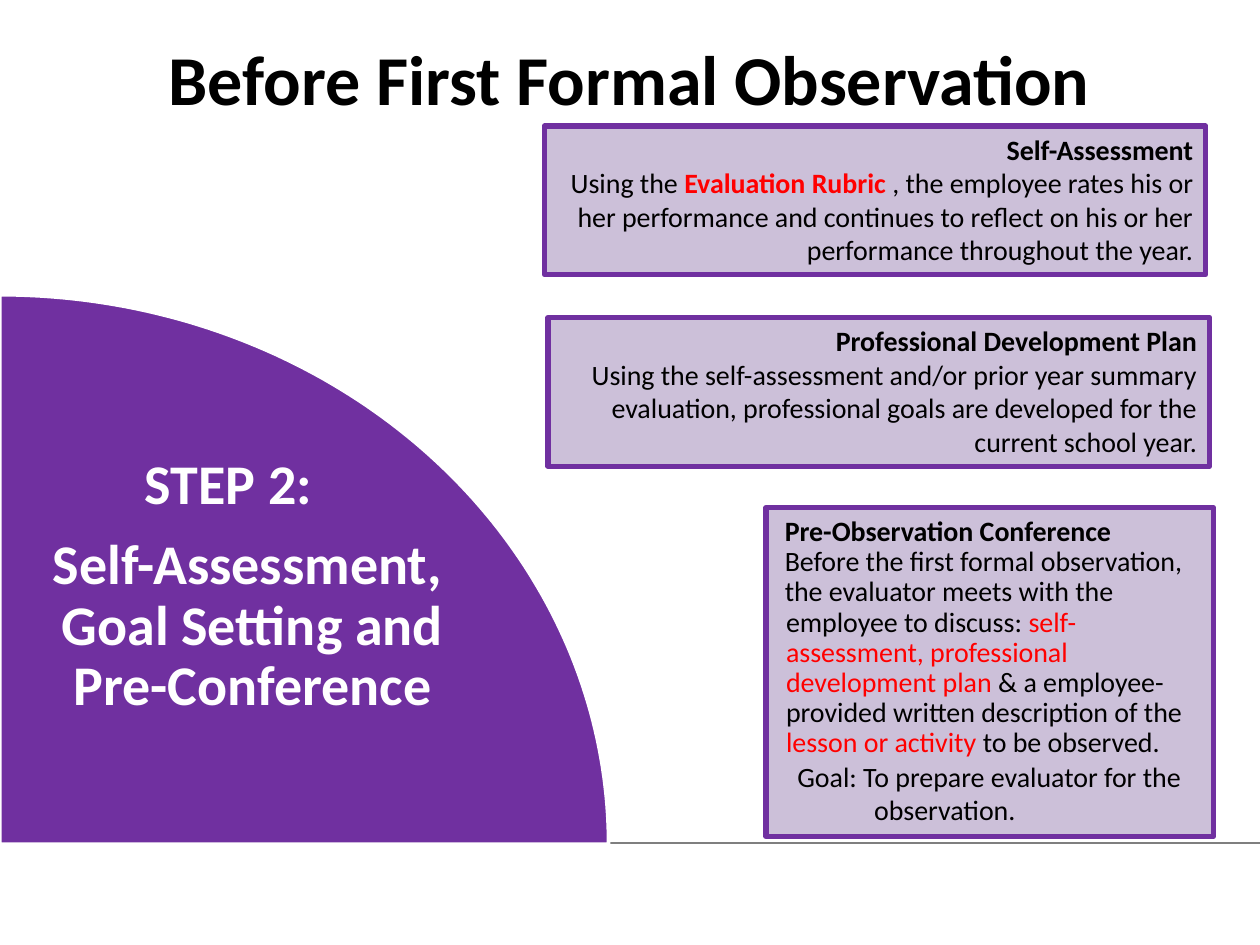
from math import cos, pi, sin

from lxml.etree import SubElement
from pptx import Presentation
from pptx.dml.color import RGBColor
from pptx.enum.shapes import MSO_CONNECTOR as Connector, MSO_SHAPE as Shape
from pptx.enum.text import MSO_ANCHOR as Anchor, PP_ALIGN as Align
from pptx.oxml.ns import qn
from pptx.util import Inches, Pt

BLACK, WHITE, RED = "000000", "FFFFFF", "FF0000"
PURPLE, LILAC, GRAY = "7030A0", "CCC0D9", "7F7F7F"
FONT = "Calibri"
BASELINE = 6.69
ARC_STEPS = 90

RIGHT = {"align": Align.RIGHT}
INSET = {"margin": 0.06, "indent": -0.01}
TIGHT = {**INSET, "spacing": 0.9}
CENTERED = {"align": Align.CENTER, "margin": 0.38, "spacing": 0.9}

TITLE = [({"align": Align.CENTER}, [("Before First Formal Observation", BLACK, True)])]
STEP = [
    ({**CENTERED, "indent": -0.38}, [("STEP 2:", WHITE, True)]),
    ({**CENTERED, "indent": -0.08, "before": 11.2},
     [("Self-Assessment, Goal Setting and Pre-Conference", WHITE, True)]),
]
CARDS = [
    ((4.35, 2.52, 5.25, 1.18), [
        (RIGHT, [("Professional Development Plan", BLACK, True)]),
        (RIGHT, [("Using the self-assessment and/or prior year summary evaluation, "
                  "professional goals are developed for the current school year.", BLACK, False)]),
    ]),
    ((4.32, 1, 5.25, 1.18), [
        (RIGHT, [("Self-Assessment", BLACK, True)]),
        (RIGHT, [
            ("Using the ", BLACK, False),
            ("Evaluation Rubric ", RED, True),
            (", the employee rates his or her performance and continues to reflect "
             "on his or her performance throughout the year.", BLACK, False),
        ]),
    ]),
    ((6.08, 4.03, 3.55, 2.61), [
        (INSET, [("Pre-Observation Conference", BLACK, True)]),
        (TIGHT, [("Before the first formal observation,", BLACK, False)]),
        (TIGHT, [
            ("the evaluator meets with the employee to discuss: ", BLACK, False),
            ("self- assessment, professional development plan ", RED, False),
            ("& a employee-provided written description of the ", BLACK, False),
            ("lesson or activity ", RED, False),
            ("to be observed.", BLACK, False),
        ]),
        ({"margin": 0.15}, [("Goal: To prepare evaluator for the", BLACK, False)]),
        ({"margin": 0.76}, [("observation.", BLACK, False)]),
    ]),
]


def color(code):
    return RGBColor.from_string(code)


def paint(shape, fill, line, width):
    shape.shadow.inherit = False
    shape.fill.solid()
    shape.fill.fore_color.rgb = color(fill)
    shape.line.color.rgb = color(line)
    shape.line.width = Pt(width)


def write(shape, paragraphs, size, anchor=Anchor.TOP):
    frame = shape.text_frame
    frame.word_wrap = True
    frame.vertical_anchor = anchor
    for index, (style, runs) in enumerate(paragraphs):
        paragraph = frame.add_paragraph() if index else frame.paragraphs[0]
        paragraph.alignment = style.get("align", Align.LEFT)
        paragraph.line_spacing = style.get("spacing", 1.0)
        paragraph.space_before = Pt(style.get("before", 0))
        properties = paragraph._p.get_or_add_pPr()
        properties.set("marL", str(Inches(style.get("margin", 0))))
        properties.set("indent", str(Inches(style.get("indent", 0))))
        for text, ink, bold in runs:
            run = paragraph.add_run()
            run.text = text
            run.font.name = FONT
            run.font.size = Pt(size)
            run.font.bold = bold
            run.font.color.rgb = color(ink)


def add_text(slide, place, paragraphs, size, anchor=Anchor.TOP):
    write(slide.shapes.add_textbox(*map(Inches, place)), paragraphs, size, anchor)


def add_quarter(slide, width, height, bottom):
    angles = [pi / 2 * step / ARC_STEPS for step in range(ARC_STEPS + 1)]
    arc = [(Inches(width * sin(a)), Inches(bottom - height * cos(a))) for a in angles]
    builder = slide.shapes.build_freeform(*arc[0])
    builder.add_line_segments(arc[1:] + [(0, Inches(bottom))], close=True)
    paint(builder.convert_to_shape(), PURPLE, WHITE, 2)


def main():
    deck = Presentation()
    deck.slide_width, deck.slide_height = Inches(10), Inches(7.5)
    slide = deck.slides.add_slide(deck.slide_layouts[6])

    rule = slide.shapes.add_connector(
        Connector.STRAIGHT, 0, Inches(BASELINE), Inches(10), Inches(BASELINE))
    rule.line.color.rgb = color(GRAY)
    rule.line.width = Pt(1)
    SubElement(rule._element.spPr, qn("a:effectLst"))

    for place, paragraphs in CARDS:
        card = slide.shapes.add_shape(Shape.RECTANGLE, *map(Inches, place))
        paint(card, LILAC, PURPLE, 3)
        write(card, paragraphs, 16)

    add_text(slide, (0.58, -0.05, 8.83, 1.33), TITLE, 40, Anchor.MIDDLE)
    add_quarter(slide, 4.83, 4.36, 6.7)
    add_text(slide, (-0.35, 3.57, 4.33, 2.58), STEP, 32)
    deck.save("out.pptx")


if __name__ == "__main__":
    main()
